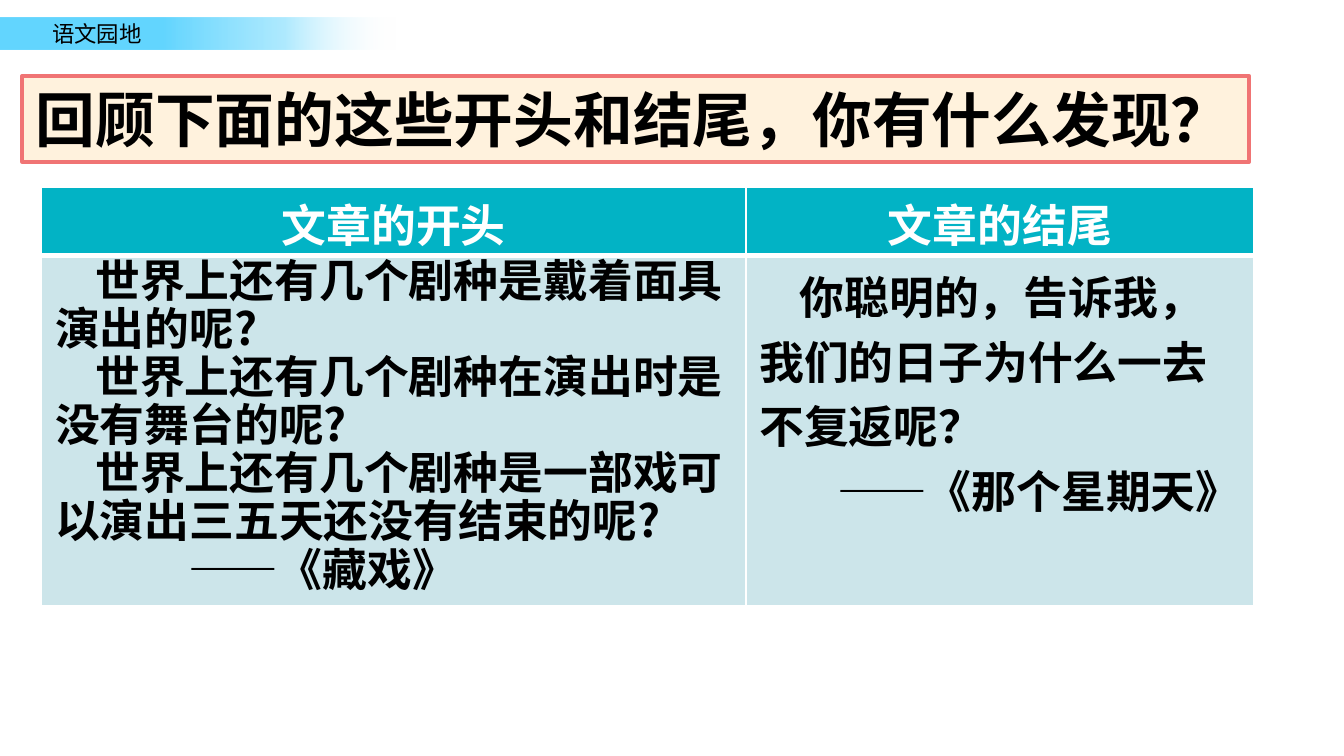
import pptx
import pptx.dml.color
import pptx.enum.shapes
import pptx.enum.text
import pptx.oxml
import pptx.oxml.ns
import pptx.util

RGB = pptx.dml.color.RGBColor
Pt = pptx.util.Pt
Align = pptx.enum.text.PP_ALIGN
Anchor = pptx.enum.text.MSO_ANCHOR

BLACK = RGB(0x00, 0x00, 0x00)
WHITE = RGB(0xFF, 0xFF, 0xFF)
CREAM = RGB(0xFF, 0xF2, 0xDD)
CORAL = RGB(0xF0, 0x74, 0x74)
TEAL = RGB(0x02, 0xB3, 0xC5)
MIST = RGB(0xCC, 0xE5, 0xEA)
SKY = RGB(0x63, 0xD6, 0xFF)
PALE = RGB(0x97, 0xE4, 0xFF)

NS = pptx.oxml.ns.nsdecls("a")
UNIT = pptx.util.Inches(0.1)  # one column or row of the grid
COLS, ROWS = 100, 56.25


def grid(*vals):
    return [round(v * UNIT) for v in vals]


def node(xml):
    return pptx.oxml.parse_xml(xml)


class Deck:
    face = "Noto Sans CJK SC"

    def __init__(self):
        self.file = pptx.Presentation()
        self.file.slide_width, self.file.slide_height = grid(COLS, ROWS)
        self.slide = self.file.slides.add_slide(self.file.slide_layouts[5])

    def style(self, para, size, color, bold=True):
        for run in para.runs:
            font = run.font
            font.size, font.bold, font.name = Pt(size), bold, self.face
            font.color.rgb = color
            props = run._r.get_or_add_rPr()
            props.set("lang", "zh-CN")
            props.find(pptx.oxml.ns.qn("a:latin")).addnext(
                node(f'<a:ea {NS} typeface="{self.face}"/>'))

    def band(self, box, stops):
        """Draw a bar that fades from left to right."""
        bar = self.slide.shapes.add_shape(
            pptx.enum.shapes.MSO_SHAPE.RECTANGLE, *grid(*box))
        bar.shadow.inherit = False
        bar.line.fill.background()
        bar.fill.gradient()
        bar.fill.gradient_angle = 0
        marks = bar._element.spPr.find(".//" + pptx.oxml.ns.qn("a:gsLst"))
        for old in list(marks):
            marks.remove(old)
        for pos, color, alpha in stops:
            marks.append(node(
                f'<a:gs {NS} pos="{pos * 1000}"><a:srgbClr val="{color}">'
                f'<a:alpha val="{alpha * 1000}"/></a:srgbClr></a:gs>'))

    def label(self, box, text, size):
        frame = self.slide.shapes.add_textbox(*grid(*box)).text_frame
        frame.word_wrap = False
        frame.text = text
        self.style(frame.paragraphs[0], size, BLACK, False)

    def title(self, box, text, size):
        shape = self.slide.shapes.title
        shape.left, shape.top, shape.width, shape.height = grid(*box)
        shape.fill.solid()
        shape.fill.fore_color.rgb = CREAM
        shape.line.color.rgb = CORAL
        shape.line.width = Pt(2)
        frame = shape.text_frame
        frame.text = text
        frame.word_wrap = False
        frame.auto_size = pptx.enum.text.MSO_AUTO_SIZE.NONE
        frame.vertical_anchor = Anchor.MIDDLE
        frame.paragraphs[0].alignment = Align.LEFT
        self.style(frame.paragraphs[0], size, BLACK)

    def table(self, spot, cols, rows):
        table = self.slide.shapes.add_table(
            len(rows), len(cols), *grid(*spot, sum(cols), sum(rows))).table
        for col, wide in zip(table.columns, grid(*cols)):
            col.width = wide
        for row, high in zip(table.rows, grid(*rows)):
            row.height = high
        return table

    def cell(self, cell, fill, color, lines, lead=None, foot=1):
        """Fill a cell with (text, alignment, first-line indent) lines."""
        cell.text = "\n".join(text for text, _, _ in lines)
        for para, (_, align, dent) in zip(cell.text_frame.paragraphs, lines):
            para.alignment = align
            if lead:
                para.line_spacing = Pt(lead)
            if dent:
                props = para._p.get_or_add_pPr()
                props.set("marL", "0")
                props.set("indent", str(grid(dent)[0]))
            self.style(para, 24, color)
        props = cell._tc.get_or_add_tcPr()
        for side, wide in zip("LRTB", (1, 1, 1, foot)):
            props.append(node(
                f'<a:ln{side} {NS} w="{Pt(wide)}"><a:solidFill>'
                f'<a:srgbClr val="{WHITE}"/></a:solidFill></a:ln{side}>'))
        cell.fill.solid()
        cell.fill.fore_color.rgb = fill


def main():
    deck = Deck()
    deck.band((0, 1.3, 30.3, 2.4),
              [(40, SKY, 100), (70, PALE, 76), (97, WHITE, 0)])
    deck.label((2.9, 1, 8.7, 3), "语文园地", 12)
    deck.title((1.65, 5.65, 91.3, 6.4), "回顾下面的这些开头和结尾，你有什么发现？", 32)

    table = deck.table((3.1, 13.9), (52.4, 37.8), (5.1, 26))
    for col, head in enumerate(("文章的开头", "文章的结尾")):
        cell = table.cell(0, col)
        deck.cell(cell, TEAL, WHITE, [(head, Align.CENTER, 0)], foot=3)
        cell.margin_top, cell.margin_bottom = grid(0.3, 0)

    asks = ("世界上还有几个剧种是戴着面具演出的呢?",
            "世界上还有几个剧种在演出时是没有舞台的呢?",
            "世界上还有几个剧种是一部戏可以演出三五天还没有结束的呢?")
    deck.cell(table.cell(1, 0), MIST, BLACK,
              [(ask, Align.LEFT, 3) for ask in asks]
              + [("——《藏戏》", Align.LEFT, 9.9)], lead=25.8)
    deck.cell(table.cell(1, 1), MIST, BLACK,
              [("你聪明的，告诉我，我们的日子为什么一去不复返呢？", Align.LEFT, 3),
               ("——《那个星期天》", Align.RIGHT, 0)])
    deck.file.save("out.pptx")


if __name__ == "__main__":
    main()
